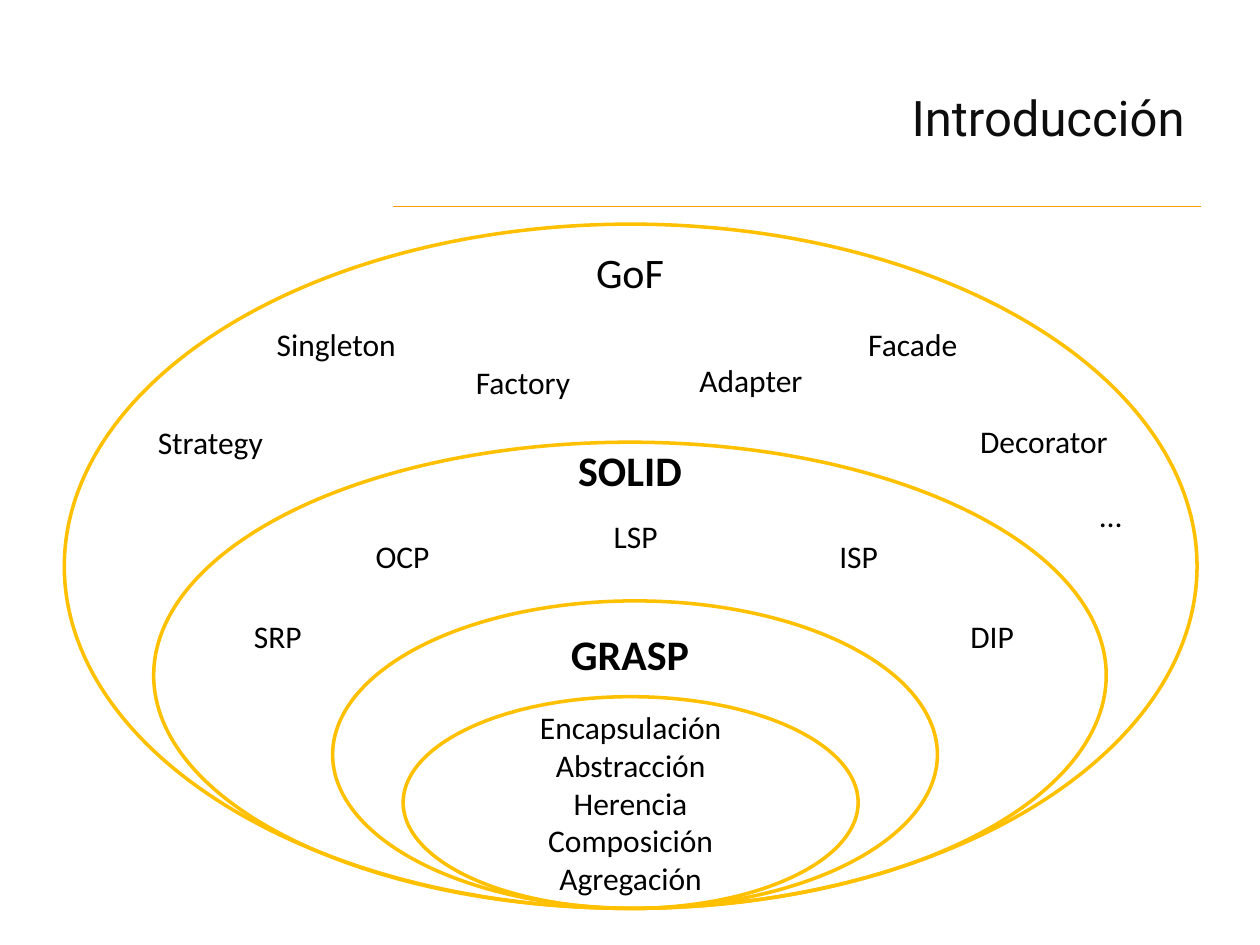
from pptx import Presentation
from pptx.dml.color import RGBColor
from pptx.enum.shapes import MSO_CONNECTOR as CONN, MSO_SHAPE as SHAPE
from pptx.enum.text import MSO_ANCHOR as ANCHOR, PP_ALIGN as ALIGN
from pptx.oxml.ns import qn
from pptx.util import Pt
from lxml import etree

COLORS = {"title": "0D0D0D", "text": "000000", "rule": "FF9900", "ring": "FFC000"}

TITLE = {"name": "Roboto", "size": Pt(28)}
HEADING = {"name": "Calibri", "size": Pt(24)}
BOLD_HEADING = {**HEADING, "bold": True}
LABEL = {"name": "Calibri", "size": Pt(18)}

# Nested sets, outermost first: centre x, width, height
RING_BOTTOM = 519.1
RINGS = [(360.4, 647.3, 391), (360, 544.3, 266.4),
         (362.9, 345.6, 175.7), (360.4, 260, 121)]

# Set names: text, top, format
HEADINGS = [("GoF", 137.5, HEADING), ("SOLID", 250.6, BOLD_HEADING),
            ("GRASP", 355.7, BOLD_HEADING)]

# Members of the sets: text, left, top, width
MEMBERS = [
    ("Strategy", 76.3, 238.3, 87.8), ("Singleton", 145.4, 182.2, 93.6),
    ("Factory", 260, 203.8, 77.8), ("Adapter", 388.1, 203, 82.1),
    ("Facade", 486.7, 182.2, 69.8), ("Decorator", 546.5, 237.6, 100.1),
    ("…", 609.1, 280.1, 51.1),
    ("SRP", 133.2, 349.2, 51.1), ("OCP", 204.5, 303.1, 51.1),
    ("LSP", 337.7, 291.6, 51.1), ("ISP", 465.1, 303.1, 51.1),
    ("DIP", 541.4, 349.2, 51.1),
]
BASICS = ["Encapsulación", "Abstracción", "Herencia", "Composición", "Agregación"]


def rgb(key):
    return RGBColor.from_string(COLORS[key])


def add_text(s, lines, box, fmt, color="text", align=ALIGN.CENTER, anchor=ANCHOR.TOP):
    tf = s.shapes.add_textbox(*map(Pt, box)).text_frame
    tf.word_wrap = True
    tf.vertical_anchor = anchor
    for i, line in enumerate(lines):
        p = tf.add_paragraph() if i else tf.paragraphs[0]
        p.alignment = align
        r = p.add_run()
        r.text = line
        for key, value in fmt.items():
            setattr(r.font, key, value)
        r.font.color.rgb = rgb(color)


def add_ring(s, center, width, height):
    box = (center - width / 2, RING_BOTTOM - height, width, height)
    sp = s.shapes.add_shape(SHAPE.OVAL, *map(Pt, box))
    sp.shadow.inherit = False
    sp.fill.background()
    sp.line.color.rgb = rgb("ring")
    sp.line.width = Pt(2)


def add_rule(s, x1, x2, y):
    line = s.shapes.add_connector(CONN.STRAIGHT, Pt(x1), Pt(y), Pt(x2), Pt(y))
    line.line.color.rgb = rgb("rule")
    line.line.width = Pt(0.75)
    etree.SubElement(line._element.spPr, qn("a:effectLst"))


def main():
    prs = Presentation()
    prs.slide_width, prs.slide_height = Pt(720), Pt(540)
    s = prs.slides.add_slide(prs.slide_layouts[6])

    # Title and rule
    add_rule(s, 686.2, 224.6, 118.1)
    add_text(s, ["Introducción"], (230.4, 21.6, 453.6, 90), TITLE,
             "title", ALIGN.RIGHT, ANCHOR.MIDDLE)

    # Nested sets
    for ring in RINGS:
        add_ring(s, *ring)

    # Names of the sets and their members
    for text, top, fmt in HEADINGS:
        add_text(s, [text], (308.9, top, 102.2, 36), fmt)
    for text, left, top, width in MEMBERS:
        add_text(s, [text], (left, top, width, 29), LABEL)
    add_text(s, BASICS, (255.6, 401, 209.5, 116.6), LABEL)

    prs.save("out.pptx")


if __name__ == "__main__":
    main()
